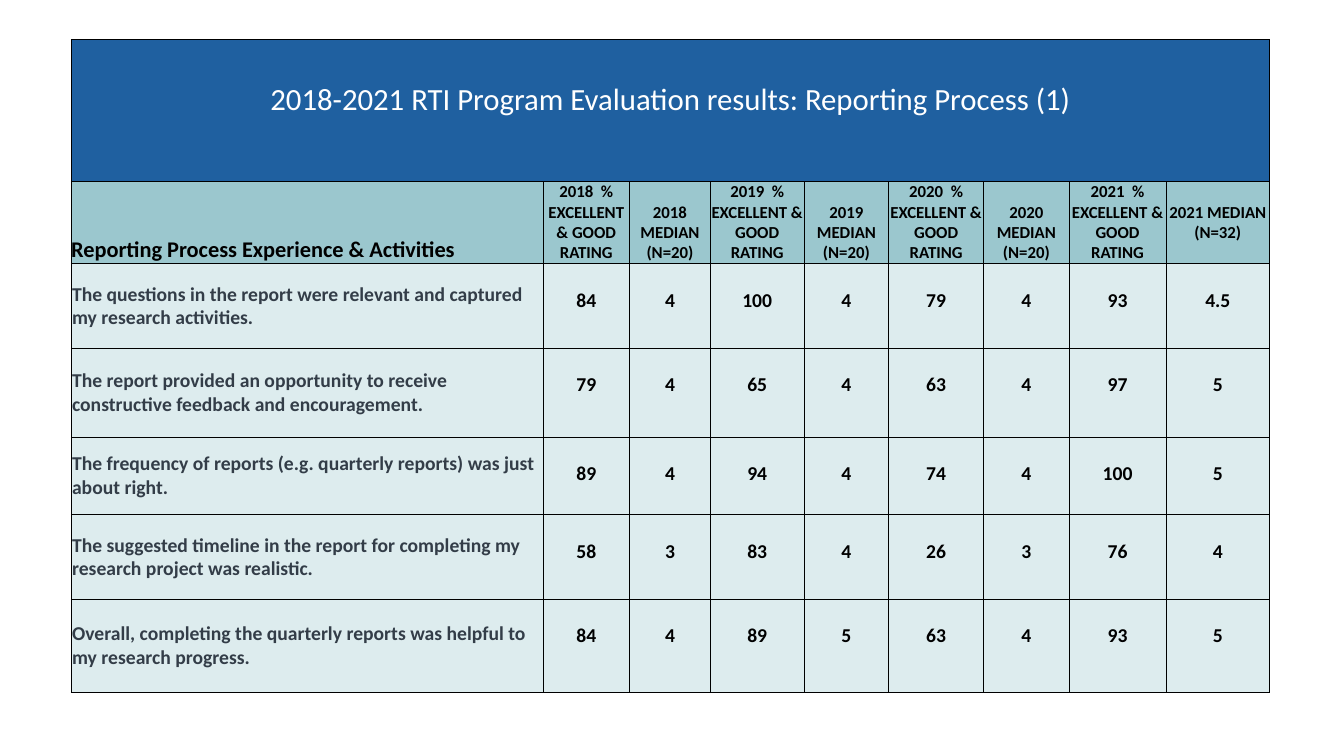
from lxml import etree
from pptx import Presentation
from pptx.dml.color import RGBColor
from pptx.enum import text
from pptx.oxml import ns
from pptx.util import Pt

BLUE = RGBColor(0x1F, 0x60, 0xA0)
TEAL = RGBColor(0x9B, 0xC7, 0xCE)
PALE = RGBColor(0xDD, 0xEC, 0xEE)
SLATE = RGBColor(0x33, 0x3D, 0x48)
WHITE = RGBColor(0xFF, 0xFF, 0xFF)
BLACK = RGBColor(0x00, 0x00, 0x00)

CENTER = text.PP_ALIGN.CENTER
LEFT = text.PP_ALIGN.LEFT
TOP = text.MSO_ANCHOR.TOP
MIDDLE = text.MSO_ANCHOR.MIDDLE
BOTTOM = text.MSO_ANCHOR.BOTTOM

COLUMN_WIDTHS = [337, 62, 57.6, 67, 60.5, 67.7, 61.2, 69.1, 74.2]
ROW_HEIGHTS = [101.5, 56.9, 60.5, 63.4, 55.4, 60.5, 66.2]

TITLE = "2018-2021 RTI Program Evaluation results: Reporting Process (1)"
ACTIVITIES_HEADING = "Reporting Process Experience & Activities"
RESPONDENTS = {2018: 20, 2019: 20, 2020: 20, 2021: 32}
RATINGS = [
    ("The questions in the report were relevant and captured my research activities.",
     [84, 4, 100, 4, 79, 4, 93, 4.5]),
    ("The report provided an opportunity to receive constructive feedback and encouragement.",
     [79, 4, 65, 4, 63, 4, 97, 5]),
    ("The frequency of reports (e.g. quarterly reports) was just about right.",
     [89, 4, 94, 4, 74, 4, 100, 5]),
    ("The suggested timeline in the report for completing my research project was realistic.",
     [58, 3, 83, 4, 26, 3, 76, 4]),
    ("Overall, completing the quarterly reports was helpful to my research progress.",
     [84, 4, 89, 5, 63, 4, 93, 5]),
]


def cell_style(fill, color, size, bold, align, anchor, left, top, bottom):
    return {
        "fill": fill,
        "align": align,
        "font": {"name": "Calibri", "size": Pt(size), "bold": bold},
        "color": color,
        "cell": {
            "vertical_anchor": anchor,
            "margin_left": Pt(left),
            "margin_right": Pt(left),
            "margin_top": Pt(top),
            "margin_bottom": Pt(bottom),
        },
    }


TITLE_STYLE = cell_style(BLUE, WHITE, 22, False, CENTER, TOP, 5.8, 29.8, 2.9)
ACTIVITIES_STYLE = cell_style(TEAL, BLACK, 16, True, LEFT, BOTTOM, 0, 0, 0)
YEAR_STYLE = cell_style(TEAL, BLACK, 12, True, CENTER, BOTTOM, 0, 0, 0)
LAST_YEAR_STYLE = cell_style(TEAL, BLACK, 12, True, CENTER, BOTTOM, 0, 0, 14.6)
STATEMENT_STYLE = cell_style(PALE, SLATE, 14, True, LEFT, MIDDLE, 0.7, 0.7, 0)
SCORE_STYLE = cell_style(PALE, BLACK, 14, True, CENTER, TOP, 0.7, 17.8, 0)


def apply(target, values):
    for name, value in values.items():
        setattr(target, name, value)


def add_borders(cell):
    properties = cell._tc.get_or_add_tcPr()
    for side in ("lnL", "lnR", "lnT", "lnB"):
        line = etree.SubElement(properties, ns.qn(f"a:{side}"), w=str(Pt(0.5)))
        solid = etree.SubElement(line, ns.qn("a:solidFill"))
        etree.SubElement(solid, ns.qn("a:srgbClr"), val=str(BLACK))


def fill_cell(cell, wording, style):
    apply(cell, style["cell"])
    cell.fill.solid()
    cell.fill.fore_color.rgb = style["fill"]
    paragraph = cell.text_frame.paragraphs[0]
    paragraph.alignment = style["align"]
    run = paragraph.add_run()
    run.text = wording
    apply(run.font, style["font"])
    run.font.color.rgb = style["color"]


def add_grid(slide):
    grid = slide.shapes.add_table(
        len(ROW_HEIGHTS), len(COLUMN_WIDTHS), Pt(50.8), Pt(28.2),
        Pt(sum(COLUMN_WIDTHS)), Pt(sum(ROW_HEIGHTS))).table
    for column, width in zip(grid.columns, COLUMN_WIDTHS):
        column.width = Pt(width)
    for row, height in zip(grid.rows, ROW_HEIGHTS):
        row.height = Pt(height)
    for cell in grid.iter_cells():
        add_borders(cell)
    return grid


def fill_headings(grid):
    grid.cell(0, 0).merge(grid.cell(0, len(COLUMN_WIDTHS) - 1))
    fill_cell(grid.cell(0, 0), TITLE, TITLE_STYLE)
    fill_cell(grid.cell(1, 0), ACTIVITIES_HEADING, ACTIVITIES_STYLE)
    for index, (year, count) in enumerate(RESPONDENTS.items()):
        median_style = LAST_YEAR_STYLE if year == max(RESPONDENTS) else YEAR_STYLE
        column = 1 + 2 * index
        fill_cell(grid.cell(1, column), f"{year}  % EXCELLENT & GOOD RATING", YEAR_STYLE)
        fill_cell(grid.cell(1, column + 1), f"{year} MEDIAN (N={count})", median_style)


def fill_ratings(grid):
    for row, (statement, scores) in enumerate(RATINGS, start=2):
        fill_cell(grid.cell(row, 0), statement, STATEMENT_STYLE)
        for column, score in enumerate(scores, start=1):
            fill_cell(grid.cell(row, column), str(score), SCORE_STYLE)


def main():
    deck = Presentation()
    apply(deck, {"slide_width": Pt(960), "slide_height": Pt(540)})
    slide = deck.slides.add_slide(deck.slide_layouts[6])
    grid = add_grid(slide)
    fill_headings(grid)
    fill_ratings(grid)
    deck.save("out.pptx")


if __name__ == "__main__":
    main()
